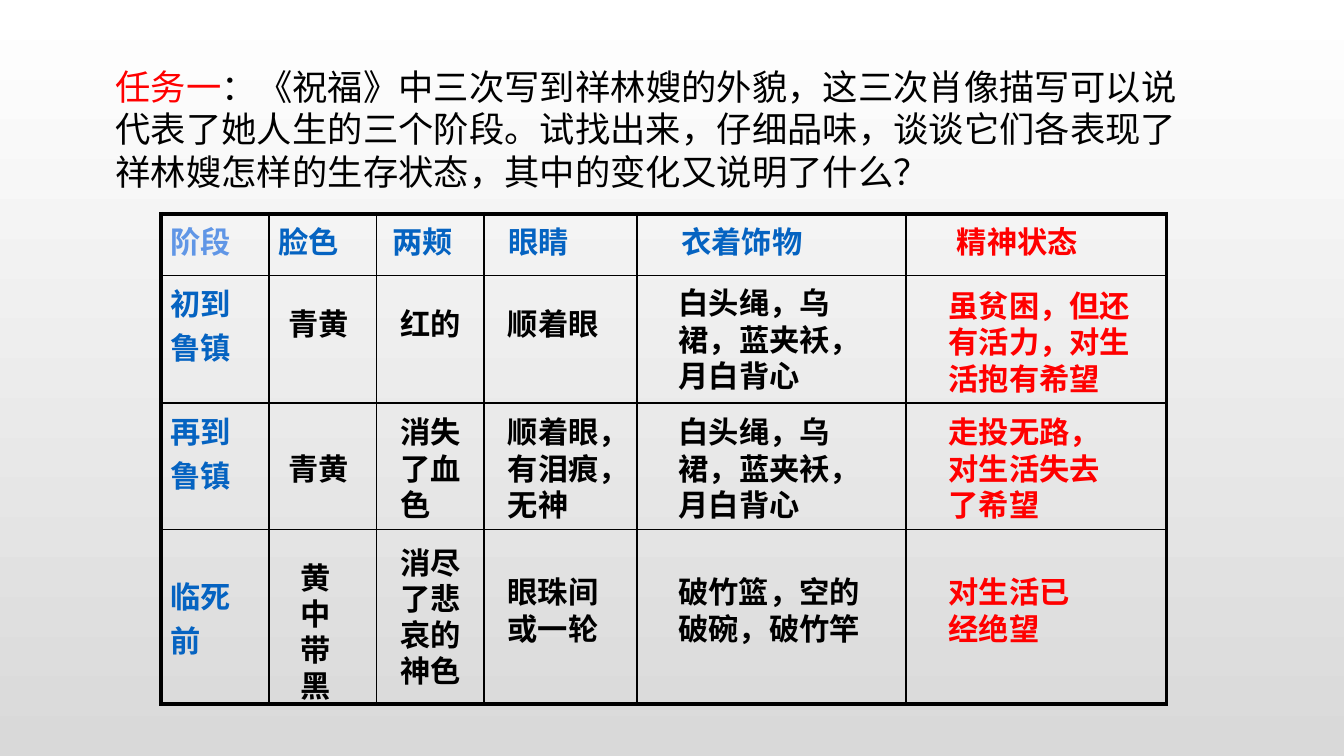
"""Build a slide comparing three portraits of a character in a bordered table."""
from lxml.etree import SubElement
from pptx import Presentation
from pptx.dml.color import RGBColor
from pptx.enum.text import MSO_ANCHOR, MSO_AUTO_SIZE, PP_ALIGN
from pptx.oxml.ns import qn
from pptx.util import Inches, Pt

COLORS = {"black": "000000", "red": "FF0000", "blue": "0563C1",
          "light_blue": "6096E6", "white": "FFFFFF", "gray": "D9D9D9"}


def add_text(p, text, size=16.2, font="Karla", color="black", bold=True, spacing=19.4):
    p.alignment = PP_ALIGN.LEFT
    p.line_spacing = Pt(spacing)
    r = p.add_run()
    r.text = text
    r.font.size = Pt(size)
    r.font.name = font
    r.font.bold = bold
    r.font.color.rgb = RGBColor.from_string(COLORS[color])
    SubElement(r.font._element, qn("a:ea"), typeface=font)


def add_border(cell, side, width):
    ln = SubElement(cell._tc.get_or_add_tcPr(), qn(f"a:ln{side}"), w=str(Pt(width)))
    SubElement(SubElement(ln, qn("a:solidFill")), qn("a:srgbClr"), val=COLORS["black"])


prs = Presentation()
prs.slide_width, prs.slide_height = Inches(10), Inches(10 * 9 / 16)
s = prs.slides.add_slide(prs.slide_layouts[5])

fill = s.background.fill
fill.gradient()
fill.gradient_angle = 270
for stop, position, color in zip(fill.gradient_stops, (0, 1), ("white", "gray")):
    stop.position = position
    stop.color.rgb = RGBColor.from_string(COLORS[color])

title = s.shapes.title
title.left, title.top = Inches(0.76), Inches(0.43)
title.width, title.height = Inches(8.26), Inches(1.73)
tf = title.text_frame
tf.word_wrap = True
tf.auto_size = MSO_AUTO_SIZE.NONE
tf.vertical_anchor = MSO_ANCHOR.TOP
question = ("：《祝福》中三次写到祥林嫂的外貌，这三次肖像描写可以说代表了她人生的三个阶段。"
            "试找出来，仔细品味，谈谈它们各表现了祥林嫂怎样的生存状态，其中的变化又说明了什么？")
for text, color in (("任务一", "red"), (question, "black")):
    add_text(tf.paragraphs[0], text, size=18.9, font="Arial", color=color,
             bold=False, spacing=22.8)

col_widths = [0.8, 0.8, 0.8, 1.14, 2, 1.94]
row_heights = [0.46, 0.95, 0.94, 1.3]
n_rows, n_cols = len(row_heights), len(col_widths)
table = s.shapes.add_table(n_rows, n_cols, Inches(1.2), Inches(1.59),
                           Inches(sum(col_widths)), Inches(sum(row_heights))).table
table.first_row = table.horz_banding = False
for col, width in zip(table.columns, col_widths):
    col.width = Inches(width)
for row, height in zip(table.rows, row_heights):
    row.height = Inches(height)

for i in range(n_rows):
    for j in range(n_cols):
        cell = table.cell(i, j)
        cell.margin_left = cell.margin_right = Inches(0.07)
        cell.margin_top = cell.margin_bottom = Inches(0.02)
        outer = {"L": j == 0, "R": j == n_cols - 1, "T": i == 0, "B": i == n_rows - 1}
        for side, is_outer in outer.items():
            add_border(cell, side, 2.25 if is_outer else 1)
        cell.fill.background()

headers = [("阶段", "light_blue", 0.07), ("脸色", "blue", 0.07), ("两颊", "blue", 0.12),
           ("眼睛", "blue", 0.18), ("衣着饰物", "blue", 0.33), ("精神状态", "red", 0.38)]
for j, (text, color, indent) in enumerate(headers):
    cell = table.cell(0, j)
    cell.margin_left = Inches(indent)
    add_text(cell.text_frame.paragraphs[0], text, font="Arial", color=color, spacing=23.5)

stages = [("初到鲁镇", 0.02), ("再到鲁镇", 0.02), ("临死前", 0.31)]
for i, (text, margin) in enumerate(stages, 1):
    cell = table.cell(i, 0)
    cell.margin_top = Inches(margin)
    add_text(cell.text_frame.paragraphs[0], text, font="Arial", color="blue", spacing=23.5)

clothes = "白头绳，乌裙，蓝夹袄，月白背心"
answers = [
    ("青黄", 2.05, 2.22, 0.65, 0.37),
    ("红的", 2.88, 2.22, 0.65, 0.37),
    ("顺着眼", 3.68, 2.22, 0.88, 0.37),
    (clothes, 4.95, 2.07, 1.52, 0.92),
    ("虽贫困，但还有活力，对生活抱有希望", 6.96, 2.09, 1.57, 0.92),
    ("青黄", 2.05, 3.3, 0.65, 0.37),
    ("消失了血色", 2.88, 3.03, 0.67, 0.92),
    ("顺着眼，有泪痕，无神", 3.68, 3.03, 1.12, 0.92),
    (clothes, 4.95, 3.03, 1.52, 0.92),
    ("走投无路，对生活失去了希望", 6.96, 3.03, 1.52, 0.92),
    ("黄中带黑", 2.14, 4.11, 0.62, 1.19),
    ("消尽了悲哀的神色", 2.88, 4, 0.7, 1.19),
    ("眼珠间或一轮", 3.68, 4.22, 0.9, 0.64),
    ("破竹篮，空的破碗，破竹竿", 4.95, 4.22, 1.57, 0.64),
    ("对生活已经绝望", 6.96, 4.22, 1.12, 0.64),
]
for text, *box in answers:
    tf = s.shapes.add_textbox(*map(Inches, box)).text_frame
    tf.word_wrap = len(text) > 3
    add_text(tf.paragraphs[0], text, color="red" if box[0] == 6.96 else "black")

prs.save("out.pptx")
